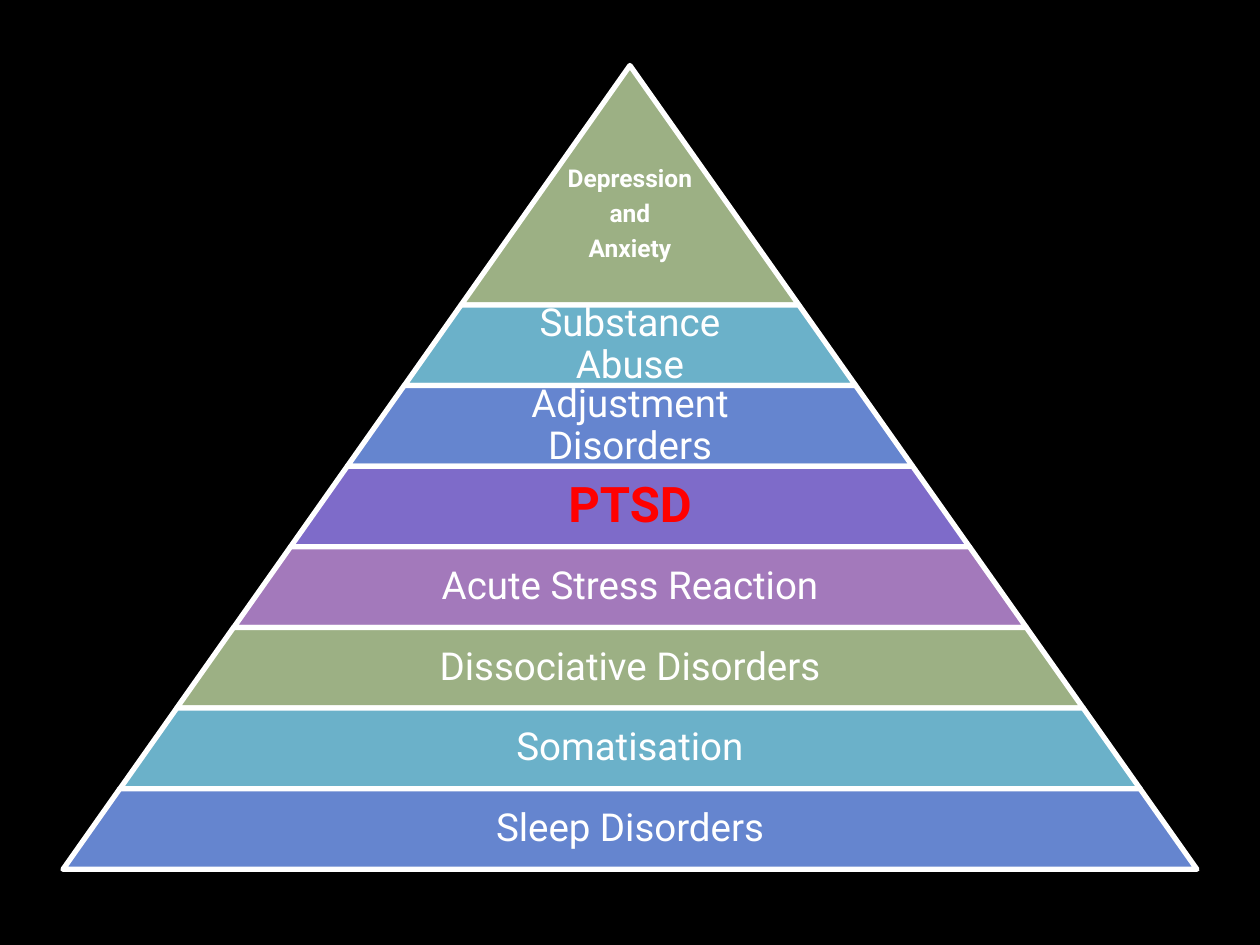
import pptx
import pptx.util
from pptx.dml.color import RGBColor
from pptx.enum.shapes import MSO_SHAPE
from pptx.enum.text import MSO_ANCHOR, PP_ALIGN
from pptx.util import Inches, Pt

BLACK = RGBColor(0x00, 0x00, 0x00)
WHITE = RGBColor(0xFF, 0xFF, 0xFF)
RED = RGBColor(0xFF, 0x00, 0x00)
GREEN = RGBColor(0x9C, 0xB0, 0x84)
TEAL = RGBColor(0x6B, 0xB1, 0xC9)
BLUE = RGBColor(0x65, 0x85, 0xCF)
VIOLET = RGBColor(0x7E, 0x6B, 0xC9)
MAUVE = RGBColor(0xA3, 0x79, 0xBB)

# Levels from the top: text, fill, text size, text colour, bold
LEVELS = [
    ("Depression\nand\nAnxiety", GREEN, 14, WHITE, True),
    ("Substance Abuse", TEAL, 22, WHITE, False),
    ("Adjustment Disorders", BLUE, 22, WHITE, False),
    ("PTSD", VIOLET, 28, RED, True),
    ("Acute Stress Reaction", MAUVE, 22, WHITE, False),
    ("Dissociative Disorders", GREEN, 22, WHITE, False),
    ("Somatisation", TEAL, 22, WHITE, False),
    ("Sleep Disorders", BLUE, 22, WHITE, False),
]

# Pyramid geometry in inches
CENTER, APEX, BASE = 5, 0.52, 9
TIP_HEIGHT, BAND_HEIGHT = 1.9, 0.64
HEIGHT = TIP_HEIGHT + BAND_HEIGHT * (len(LEVELS) - 1)
SLOPE = BASE / 2 / HEIGHT
LABEL_SHARE = 0.65   # label width as a share of its band
TIP_INSET = 0.5      # pushes the tip's label down to where it is wider

prs = pptx.Presentation()
prs.slide_width, prs.slide_height = Inches(10), Inches(7.5)
s = prs.slides.add_slide(prs.slide_layouts[6])
s.background.fill.solid()
s.background.fill.fore_color.rgb = BLACK


def add_band(top, width, height, color):
    sp = s.shapes.add_shape(MSO_SHAPE.TRAPEZOID, Inches(CENTER - width / 2),
                            Inches(top), Inches(width), Inches(height))
    sp.adjustments[0] = SLOPE
    sp.shadow.inherit = False
    sp.fill.solid()
    sp.fill.fore_color.rgb = color
    sp.line.color.rgb = WHITE
    sp.line.width = Pt(3)


def add_label(text, top, width, height, inset_top, size, color, bold):
    box = s.shapes.add_textbox(Inches(CENTER - width / 2), Inches(top),
                               Inches(width), Inches(height))
    tf = box.text_frame
    tf.word_wrap = True
    tf.vertical_anchor = MSO_ANCHOR.MIDDLE
    tf.margin_left = tf.margin_right = tf.margin_bottom = Inches(0.03)
    tf.margin_top = Inches(inset_top)
    tf.text = text
    for p in tf.paragraphs:
        p.alignment = PP_ALIGN.CENTER
        p.line_spacing = 0.9
        p.space_after = Pt(0.35 * size)
        for r in p.runs:
            r.font.name = "Roboto"
            r.font.size = Pt(size)
            r.font.bold = bold
            r.font.color.rgb = color


# Stack the levels from the apex down
top = APEX
for i, (text, fill, size, color, bold) in enumerate(LEVELS):
    is_tip = i == 0
    height = TIP_HEIGHT if is_tip else BAND_HEIGHT
    width = 2 * SLOPE * (top + height - APEX)
    add_band(top, width, height, fill)
    add_label(text, top, width if is_tip else width * LABEL_SHARE, height,
              TIP_INSET if is_tip else 0.03, size, color, bold)
    top += height

prs.save("out.pptx")
